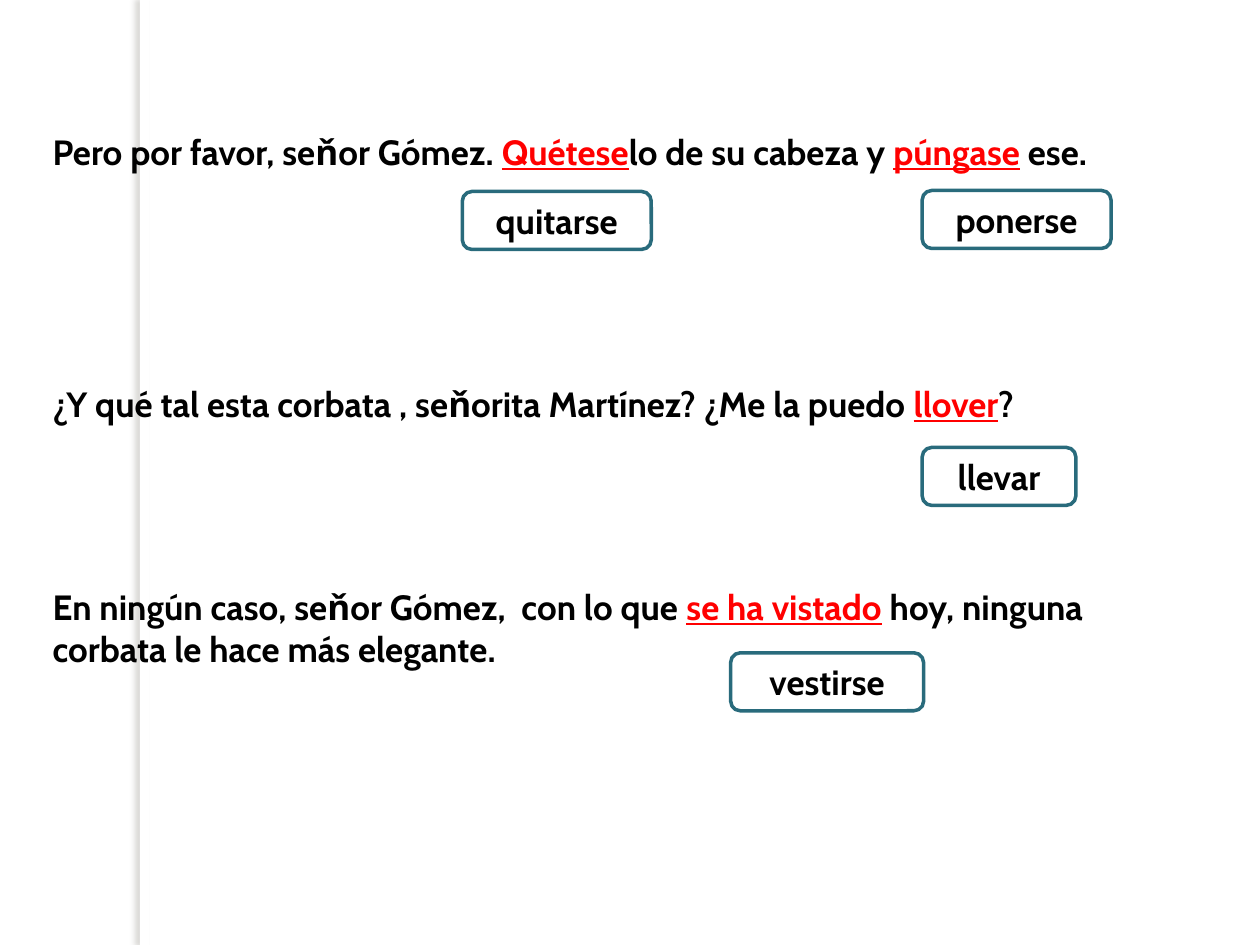
from dataclasses import dataclass

from lxml.etree import SubElement
from pptx import Presentation
from pptx.dml.color import RGBColor
from pptx.enum.shapes import MSO_SHAPE
from pptx.enum.text import MSO_ANCHOR, MSO_AUTO_SIZE, PP_ALIGN
from pptx.oxml.ns import qn
from pptx.util import Cm, Pt


@dataclass(frozen=True)
class Theme:
    font: str = "Cabin"
    text_size: float = 20
    line_width: float = 2
    text: str = "000000"
    mistake: str = "FF0000"
    paper: str = "FFFFFF"
    border: str = "296B7C"
    shadow: str = "736F63"


class SlideBuilder:
    def __init__(self, slide, theme):
        self.slide = slide
        self.theme = theme

    def format_run(self, run, is_mistake=False):
        font = run.font
        font.name = self.theme.font
        font.size = Pt(self.theme.text_size)
        font.bold = True
        font.underline = is_mistake
        color = self.theme.mistake if is_mistake else self.theme.text
        font.color.rgb = RGBColor.from_string(color)

    def add_filled_shape(self, kind, left, top, width, height):
        shape = self.slide.shapes.add_shape(
            kind, Cm(left), Cm(top), Cm(width), Cm(height))
        shape.shadow.inherit = False
        shape.fill.solid()
        shape.fill.fore_color.rgb = RGBColor.from_string(self.theme.paper)
        return shape

    def add_margin_strip(self, left, width, height):
        shape = self.add_filled_shape(MSO_SHAPE.RECTANGLE, left, 0, width, height)
        shape.line.fill.background()
        effects = shape._element.spPr.find(qn("a:effectLst"))
        shadow = SubElement(effects, qn("a:outerShdw"), blurRad=str(Pt(3)),
                            dist=str(Pt(3)), dir="10800000", rotWithShape="0")
        color = SubElement(shadow, qn("a:srgbClr"), val=self.theme.shadow)
        SubElement(color, qn("a:alpha"), val="25000")

    def add_sentence(self, left, top, width, height, lines):
        text_box = self.slide.shapes.add_textbox(
            Cm(left), Cm(top), Cm(width), Cm(height))
        text_frame = text_box.text_frame
        text_frame.word_wrap = False
        text_frame.auto_size = MSO_AUTO_SIZE.SHAPE_TO_FIT_TEXT
        for index, parts in enumerate(lines):
            paragraph = text_frame.add_paragraph() if index else text_frame.paragraphs[0]
            for position, part in enumerate(parts):
                run = paragraph.add_run()
                run.text = part
                self.format_run(run, is_mistake=position % 2 == 1)

    def add_correction(self, left, top, width, height, verb):
        shape = self.add_filled_shape(
            MSO_SHAPE.ROUNDED_RECTANGLE, left, top, width, height)
        shape.line.color.rgb = RGBColor.from_string(self.theme.border)
        shape.line.width = Pt(self.theme.line_width)
        text_frame = shape.text_frame
        text_frame.text = verb
        text_frame.vertical_anchor = MSO_ANCHOR.MIDDLE
        paragraph = text_frame.paragraphs[0]
        paragraph.alignment = PP_ALIGN.CENTER
        self.format_run(paragraph.runs[0])


SENTENCES = [
    (7.59, 21.77, 1.12, [
        ["¿Y qué tal esta corbata , seňorita Martínez? ¿Me la puedo ", "llover", "?"],
    ]),
    (11.68, 22.89, 1.96, [
        ["En ningún caso, seňor Gómez,  con lo que ", "se ha vistado", " hoy, ninguna"],
        ["corbata le hace más elegante."],
    ]),
    (2.51, 23.09, 1.12, [
        ["Pero por favor, seňor Gómez. ", "Quétese", "lo de su cabeza y ",
         "púngase", " ese."],
    ]),
]

CORRECTIONS = [
    (9.32, 3.86, 3.81, "quitarse"),
    (18.59, 3.84, 3.81, "ponerse"),
    (18.59, 9.02, 3.1, "llevar"),
    (14.73, 13.16, 3.89, "vestirse"),
]


def main():
    presentation = Presentation()
    presentation.slide_width = Cm(25.4)
    presentation.slide_height = Cm(19.05)
    slide = presentation.slides.add_slide(presentation.slide_layouts[6])
    builder = SlideBuilder(slide, Theme())

    builder.add_margin_strip(2.82, 0.2, 19.05)
    for top, width, height, lines in SENTENCES:
        builder.add_sentence(0.81, top, width, height, lines)
    for left, top, width, verb in CORRECTIONS:
        builder.add_correction(left, top, width, 1.17, verb)

    presentation.save("out.pptx")


if __name__ == "__main__":
    main()
